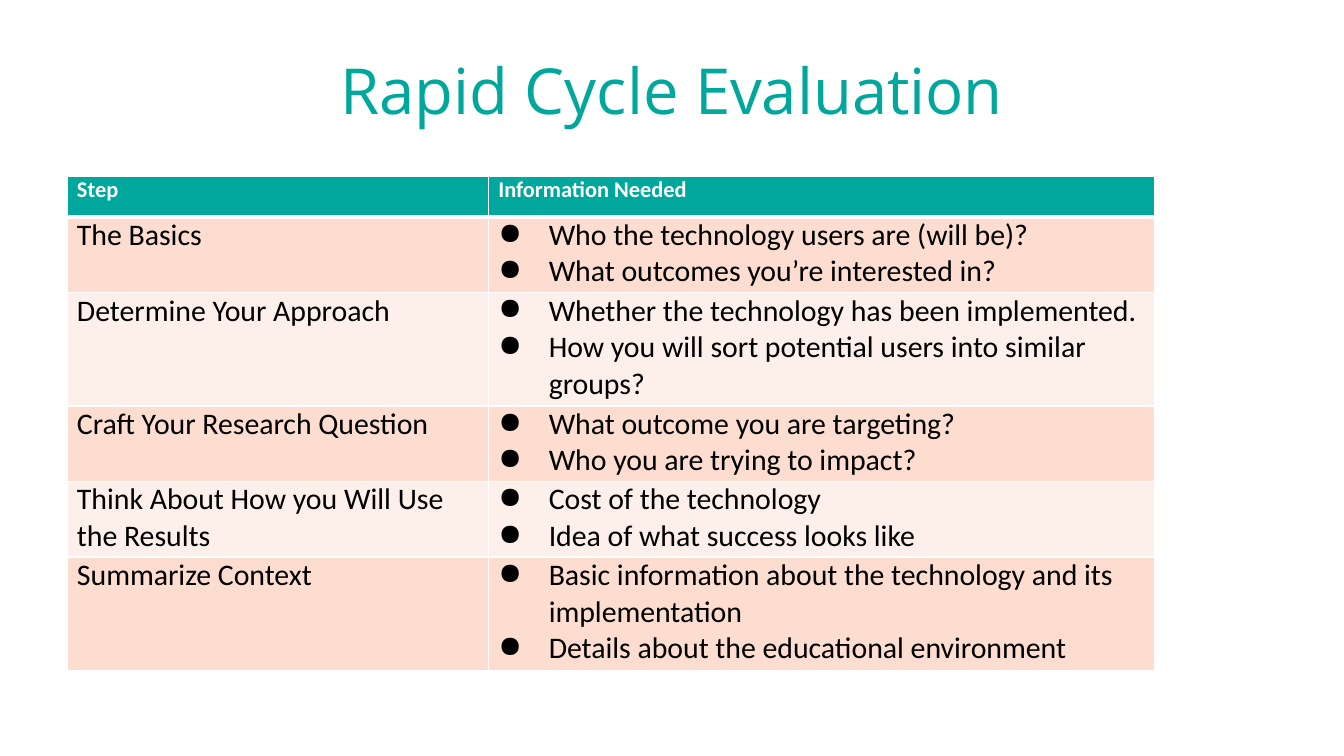
"""Build the Rapid Cycle Evaluation slide with its table of steps."""
from dataclasses import dataclass

from lxml.etree import SubElement
from pptx import Presentation
from pptx.dml.color import RGBColor
from pptx.enum.text import MSO_ANCHOR as Anchor, MSO_AUTO_SIZE as AutoSize, PP_ALIGN as Align
from pptx.oxml import parse_xml
from pptx.oxml.ns import nsdecls, qn
from pptx.util import Emu, Pt

EMU_PER_PX = 9525
TEAL = RGBColor(0x00, 0xA7, 0x9D)
PEACH = RGBColor(0xFC, 0xDD, 0xCF)
PALE_PEACH = RGBColor(0xFD, 0xEF, 0xE9)
WHITE = RGBColor(0xFF, 0xFF, 0xFF)
BLACK = RGBColor(0x00, 0x00, 0x00)
BODY_FONT = "Calibri"
TITLE_FONT = "Open Sans"
BULLET_INDENT = 36
COLUMN_WIDTHS = (301, 476)
HEADER_HEIGHT = 29
HEADINGS = ("Step", "Information Needed")


@dataclass(frozen=True)
class Step:
    """A step, the information it needs and its row height in px."""
    name: str
    needs: tuple[str, ...]
    height: int


STEPS = (
    Step("The Basics", (
        "Who the technology users are (will be)?",
        "What outcomes you’re interested in?"), 54),
    Step("Determine Your Approach", (
        "Whether the technology has been implemented.",
        "How you will sort potential users into similar groups?"), 81),
    Step("Craft Your Research Question", (
        "What outcome you are targeting?",
        "Who you are trying to impact?"), 54),
    Step("Think About How you Will Use the Results", (
        "Cost of the technology",
        "Idea of what success looks like"), 54),
    Step("Summarize Context", (
        "Basic information about the technology and its implementation",
        "Details about the educational environment"), 81),
)


def px(length: int) -> Emu:
    """Turn px into EMU."""
    return Emu(length * EMU_PER_PX)


def write_para(para, text: str, *, font: str = BODY_FONT, size: int = 16,
               color: RGBColor = BLACK, bold: bool = False,
               bullet: bool = False, align: Align = Align.LEFT) -> None:
    """Fill a paragraph with one formatted span."""
    para.alignment = align
    if bullet:
        properties = para._p.get_or_add_pPr()
        properties.set("marL", str(px(BULLET_INDENT)))
        properties.set("indent", str(-px(BULLET_INDENT)))
        SubElement(properties, qn("a:buChar"), char="●")
    span = para.add_run()
    span.text = text
    span.font.name = font
    span.font.size = Pt(size)
    span.font.color.rgb = color
    span.font.bold = bold


def set_borders(cell, *, top: int = 1, bottom: int = 1) -> None:
    """Give a cell white borders with widths in points."""
    properties = cell._tc.get_or_add_tcPr()
    widths = {"lnL": 1, "lnR": 1, "lnT": top, "lnB": bottom}
    for index, (side, width) in enumerate(widths.items()):
        properties.insert(index, parse_xml(
            f'<a:{side} {nsdecls("a")} w="{Pt(width)}"><a:solidFill>'
            f'<a:srgbClr val="{WHITE}"/></a:solidFill></a:{side}>'))


def fill_cell(cell, lines: tuple[str, ...], fill: RGBColor, *,
              top: int = 1, bottom: int = 1, **text_format) -> None:
    """Write lines into a cell and set its fill, margins and borders."""
    cell.margin_left = cell.margin_right = px(7)
    cell.margin_top = cell.margin_bottom = px(0)
    cell.vertical_anchor = Anchor.TOP
    cell.fill.solid()
    cell.fill.fore_color.rgb = fill
    set_borders(cell, top=top, bottom=bottom)
    frame = cell.text_frame
    for index, line in enumerate(lines):
        para = frame.add_paragraph() if index else frame.paragraphs[0]
        write_para(para, line, **text_format)


def add_title(page, text: str) -> None:
    """Place and format the title placeholder."""
    box = page.shapes.title
    box.left, box.top, box.width, box.height = map(px, (48, 29, 864, 70))
    frame = box.text_frame
    frame.auto_size = AutoSize.NONE
    frame.vertical_anchor = Anchor.MIDDLE
    write_para(frame.paragraphs[0], text, font=TITLE_FONT, size=34,
               color=TEAL, align=Align.CENTER)


def add_step_table(page, steps: tuple[Step, ...]) -> None:
    """Draw the header and one banded row per step."""
    heights = (HEADER_HEIGHT, *(step.height for step in steps))
    table = page.shapes.add_table(
        len(heights), len(COLUMN_WIDTHS), px(48), px(126),
        px(sum(COLUMN_WIDTHS)), px(sum(heights))).table
    for column, width in zip(table.columns, COLUMN_WIDTHS):
        column.width = px(width)
    for row, height in zip(table.rows, heights):
        row.height = px(height)
    for column, heading in enumerate(HEADINGS):
        fill_cell(table.cell(0, column), (heading,), TEAL, bottom=3,
                  size=12, color=WHITE, bold=True)
    for row, step in enumerate(steps, start=1):
        fill = PEACH if row % 2 else PALE_PEACH
        top = 3 if row == 1 else 1
        fill_cell(table.cell(row, 0), (step.name,), fill, top=top)
        fill_cell(table.cell(row, 1), step.needs, fill, top=top, bullet=True)


def main() -> None:
    """Build and save the deck."""
    deck = Presentation()
    deck.slide_width, deck.slide_height = px(960), px(540)
    page = deck.slides.add_slide(deck.slide_layouts.get_by_name("Title Only"))
    add_title(page, "Rapid Cycle Evaluation")
    add_step_table(page, STEPS)
    deck.save("out.pptx")


if __name__ == "__main__":
    main()
